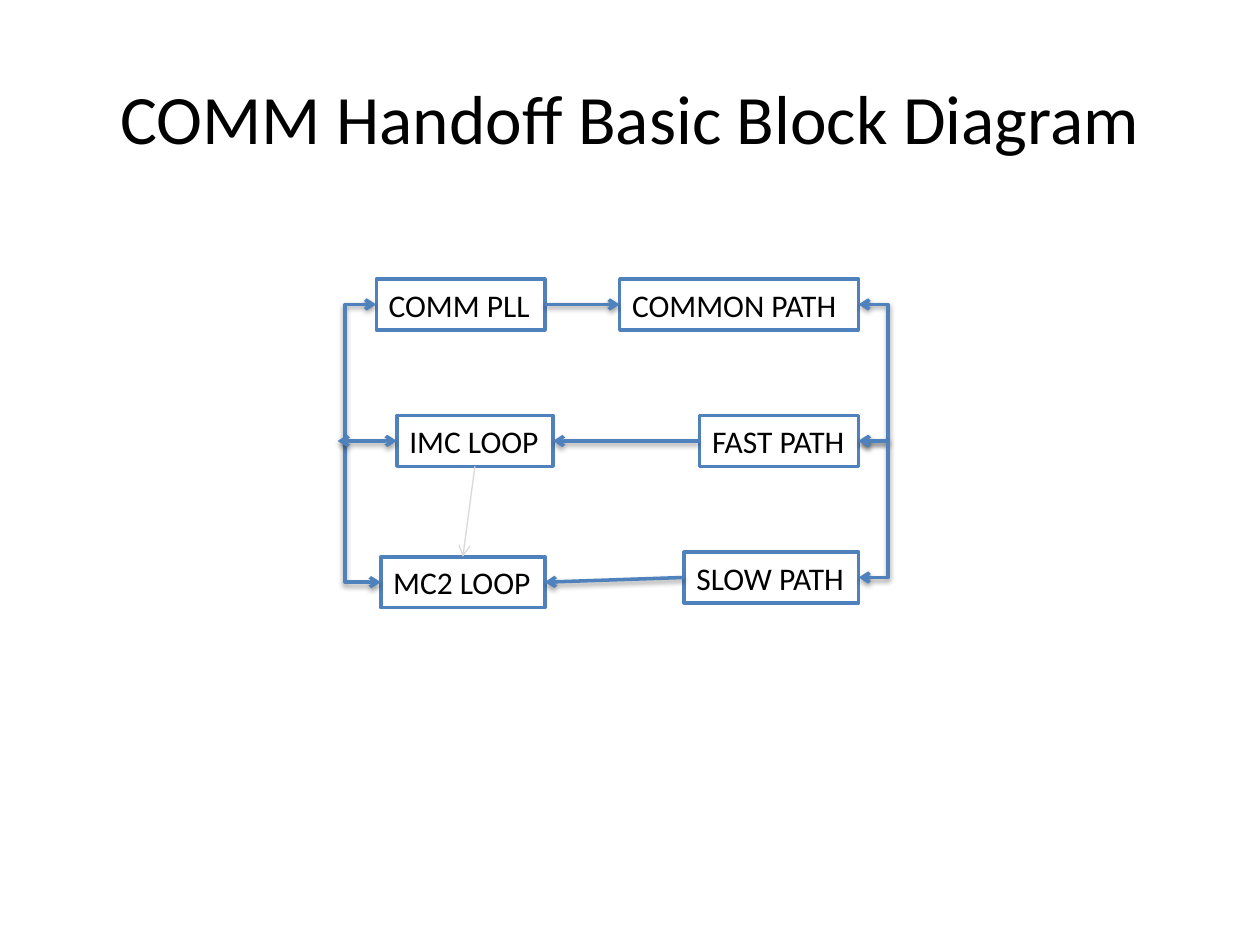
from pptx import Presentation
from pptx.dml.color import RGBColor
from pptx.enum.shapes import MSO_CONNECTOR as Route, MSO_SHAPE as Preset
from pptx.enum.text import MSO_ANCHOR as Anchor, PP_ALIGN as Align
from pptx.oxml import parse_xml
from pptx.oxml.ns import nsdecls, qn
from pptx.util import Pt
from lxml.etree import SubElement

TOP, LEFT, BOTTOM, RIGHT = range(4)


def rgb(value):
    return RGBColor.from_string(value)


class Diagram:
    font = "Calibri"
    ink, paper, blue, grey = "000000", "FFFFFF", "4F81BD", "D9D9D9"
    block_height = 29

    def __init__(self, slide):
        self.slide = slide

    def label(self, frame, text, size, align):
        frame.word_wrap = True
        frame.vertical_anchor = Anchor.MIDDLE
        frame.text = text
        paragraph = frame.paragraphs[0]
        paragraph.alignment = align
        font = paragraph.runs[0].font
        font.name, font.size = self.font, Pt(size)
        font.color.rgb = rgb(self.ink)

    def title(self, text, x, y, width, height):
        heading = self.slide.shapes.add_textbox(Pt(x), Pt(y), Pt(width), Pt(height))
        self.label(heading.text_frame, text, 39.6, Align.CENTER)

    def block(self, text, left, right, middle):
        block = self.slide.shapes.add_shape(
            Preset.RECTANGLE, Pt(left), Pt(middle - self.block_height / 2),
            Pt(right - left), Pt(self.block_height))
        block.shadow.inherit = False
        block.fill.solid()
        block.fill.fore_color.rgb = rgb(self.paper)
        block.line.color.rgb = rgb(self.blue)
        block.line.width = Pt(2)
        block.text_frame.margin_right = 0
        self.label(block.text_frame, text, 18, Align.LEFT)
        return block

    def finish(self, link, color, width, ends, shadow):
        link.line.color.rgb = rgb(color)
        link.line.width = Pt(width)
        outline = link._element.spPr.find(qn("a:ln"))
        for end in ends:
            SubElement(outline, qn(f"a:{end}"), type="arrow")
        effect = (
            f'<a:outerShdw blurRad="{Pt(3.1)}" dist="{Pt(1.6)}" dir="5400000" rotWithShape="0">'
            f'<a:srgbClr val="{self.ink}"><a:alpha val="38000"/></a:srgbClr></a:outerShdw>'
        ) if shadow else ""
        link._element.spPr.append(
            parse_xml(f'<a:effectLst {nsdecls("a")}>{effect}</a:effectLst>'))

    def arrow(self, source, source_side, target, target_side,
              color=blue, width=2, shadow=True):
        link = self.slide.shapes.add_connector(Route.STRAIGHT, 0, 0, 0, 0)
        link.begin_connect(source, source_side)
        link.end_connect(target, target_side)
        self.finish(link, color, width, ["tailEnd"], shadow)

    def elbow(self, start, end, bend):
        link = self.slide.shapes.add_connector(
            Route.ELBOW, *(Pt(value) for value in (*start, *end)))
        share = round((bend - start[0]) / (end[0] - start[0]) * 100000)
        guides = link._element.spPr.find(qn("a:prstGeom")).find(qn("a:avLst"))
        SubElement(guides, qn("a:gd"), name="adj1", fmla=f"val {share}")
        self.finish(link, self.blue, 2, ["headEnd", "tailEnd"], True)


def main():
    deck = Presentation()
    deck.slide_width, deck.slide_height = Pt(720), Pt(540)
    diagram = Diagram(deck.slides.add_slide(deck.slide_layouts[6]))
    diagram.title("COMM Handoff Basic Block Diagram", 36, 21.6, 648, 90)

    common_row, fast_row, slow_row = (174 + 78 * row for row in range(3))
    mc2_row = 332.7
    path_edge = 490.6
    pll_edge, imc_edge, mc2_edge = 215, 226.8, 217.6

    pll = diagram.block("COMM PLL", pll_edge, 311.4, common_row)
    common = diagram.block("COMMON PATH", 354.1, path_edge, common_row)
    fast = diagram.block("FAST PATH", 399.8, path_edge, fast_row)
    slow = diagram.block("SLOW PATH", 390.9, path_edge, slow_row)
    imc = diagram.block("IMC LOOP", imc_edge, 316, fast_row)
    mc2 = diagram.block("MC2 LOOP", mc2_edge, 311.4, mc2_row)

    diagram.arrow(pll, RIGHT, common, LEFT)
    diagram.arrow(fast, LEFT, imc, RIGHT)
    diagram.arrow(slow, LEFT, mc2, RIGHT)

    for upper, lower in ((common_row, fast_row), (fast_row, slow_row)):
        diagram.elbow((path_edge, upper), (path_edge + 0.12, lower), 508.4)
    diagram.elbow((mc2_edge, mc2_row), (pll_edge, common_row), 197.2)
    diagram.elbow((imc_edge, fast_row), (193, fast_row), 209.9)

    diagram.arrow(imc, BOTTOM, mc2, TOP, diagram.grey, 0.75, False)
    deck.save("out.pptx")


if __name__ == "__main__":
    main()
